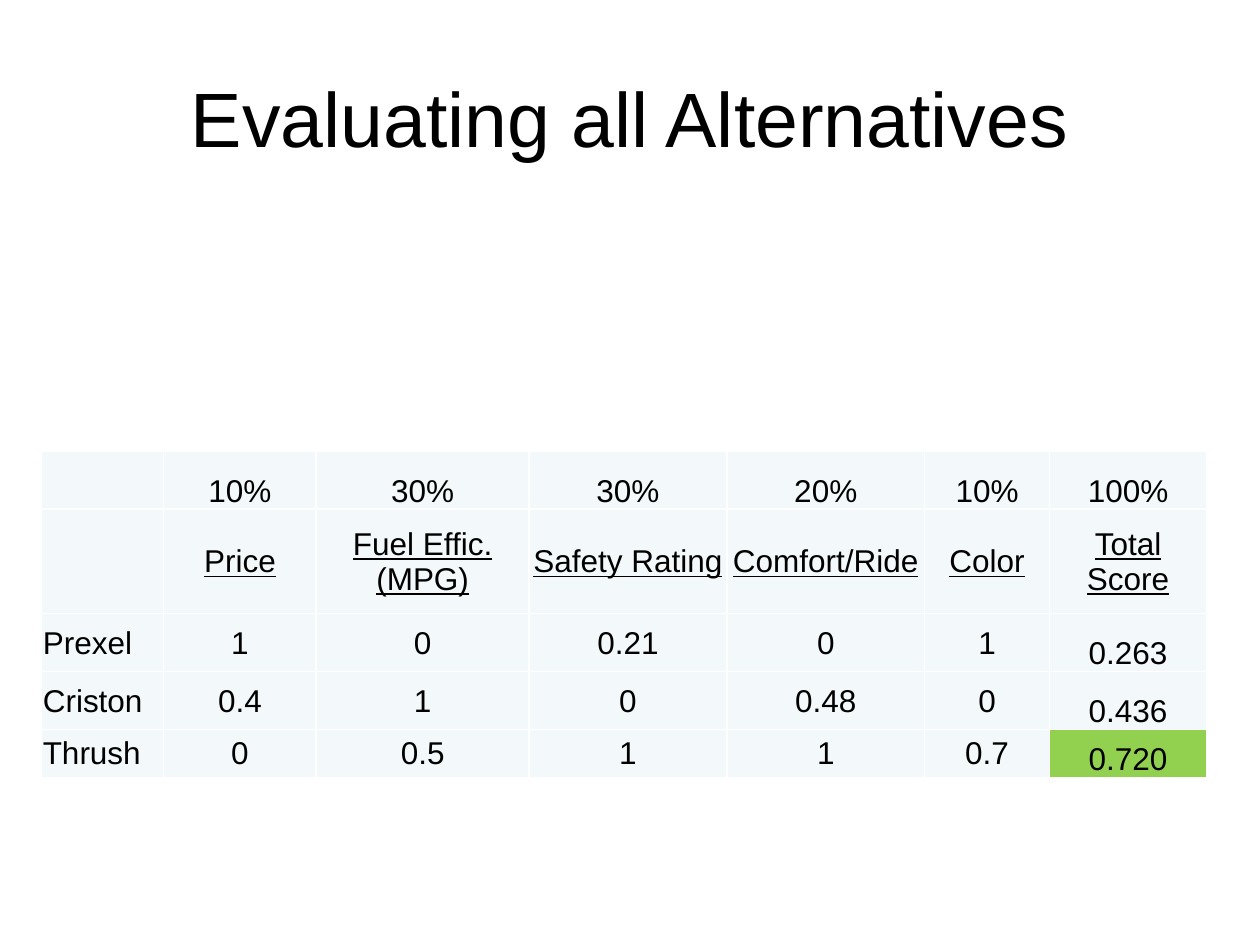
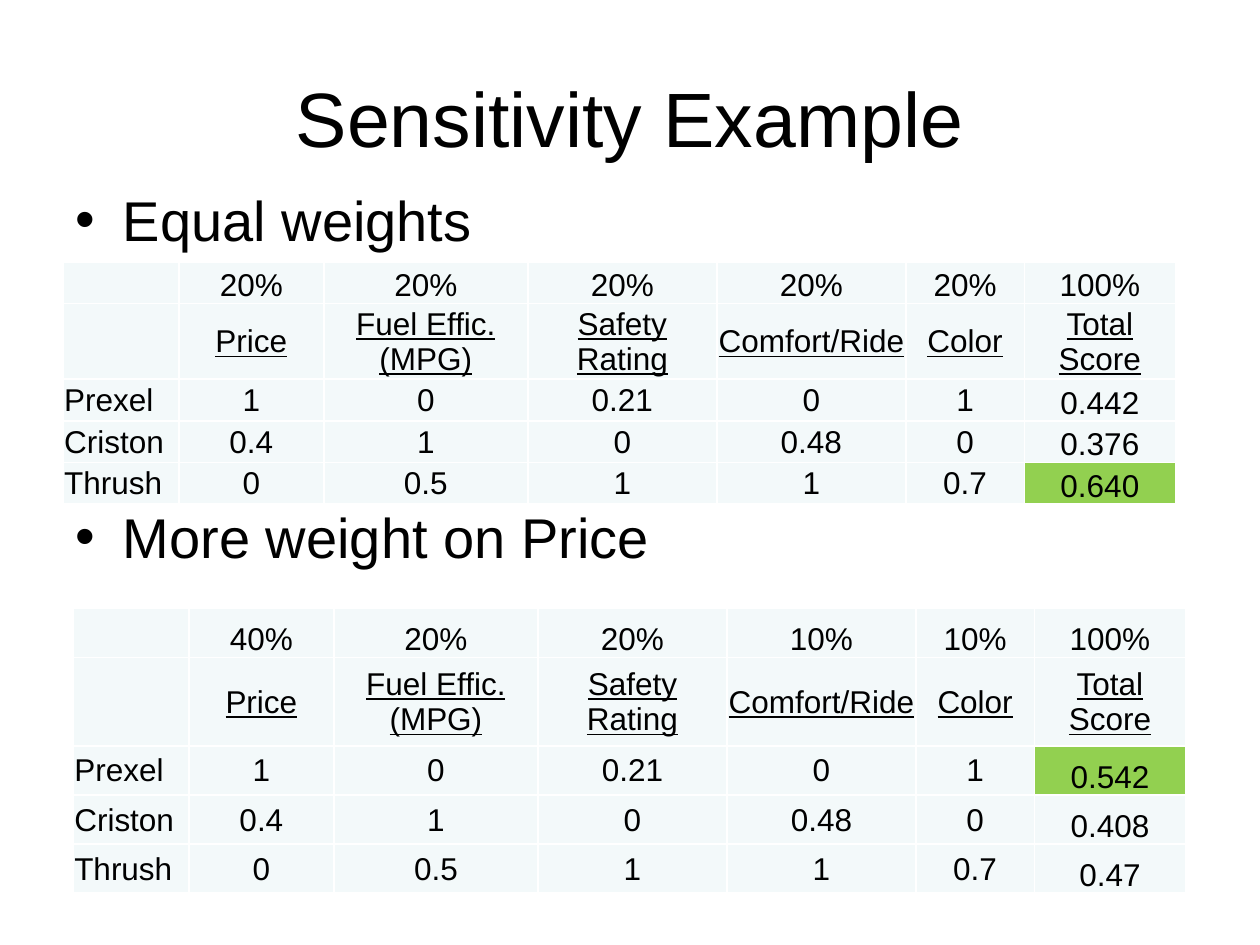
import pptx
import pptx.util
import pptx.dml.color
import pptx.enum.text
import pptx.oxml
import pptx.oxml.ns

Inches, Pt = pptx.util.Inches, pptx.util.Pt
ALIGN = pptx.enum.text.PP_ALIGN
ANCHOR = pptx.enum.text.MSO_ANCHOR

COLORS = {"text": "000000", "cell": "F3F9FA", "best": "92D050", "border": "FFFFFF"}
FONT = "Arial"

# Content shared by all score tables
CRITERIA = ["Price", "Fuel Effic. (MPG)", "Safety Rating", "Comfort/Ride", "Color", "Total Score"]
RATINGS = {
    "Prexel": ["1", "0", "0.21", "0", "1"],
    "Criston": ["0.4", "1", "0", "0.48", "0"],
    "Thrush": ["0", "0.5", "1", "1", "0.7"],
}
WIDE_COLS = [0.97, 1.21, 1.69, 1.57, 1.57, 0.99, 1.25]
NARROW_COLS = [0.92, 1.15, 1.62, 1.5, 1.5, 0.94, 1.2]


def rgb(name):
    return pptx.dml.color.RGBColor.from_string(COLORS[name])


def place(shape, left, top, width, height):
    shape.left, shape.top = Inches(left), Inches(top)
    shape.width, shape.height = Inches(width), Inches(height)


def format_runs(p, size, underline=None):
    for r in p.runs:
        r.font.name = FONT
        r.font.size = Pt(size)
        r.font.color.rgb = rgb("text")
        r.font.underline = underline


def add_slide(prs, layout, title):
    s = prs.slides.add_slide(prs.slide_layouts[layout])
    place(s.shapes.title, 0.5, 0.3, 9, 1.25)
    tf = s.shapes.title.text_frame
    tf.text = title
    tf.vertical_anchor = ANCHOR.MIDDLE
    tf.paragraphs[0].alignment = ALIGN.CENTER
    format_runs(tf.paragraphs[0], 44)
    return s


def fill_body(s, bullets, gap):
    """Write the bullets with a gap, in points, that leaves room for a table."""
    body = s.placeholders[1]
    place(body, 0.5, 1.42, 9, 5.92)
    tf = body.text_frame
    tf.text = "\n".join(bullets)
    tf.auto_size = pptx.enum.text.MSO_AUTO_SIZE.NONE
    for i, p in enumerate(tf.paragraphs):
        if i:
            p.space_before = Pt(gap)
        format_runs(p, 32)


def set_borders(cell):
    tc_pr = cell._tc.get_or_add_tcPr()
    for i, side in enumerate(["lnL", "lnR", "lnT", "lnB"]):
        tc_pr.insert(i, pptx.oxml.parse_xml(
            f'<a:{side} {pptx.oxml.ns.nsdecls("a")} w="12700"><a:solidFill>'
            f'<a:srgbClr val="{COLORS["border"]}"/></a:solidFill></a:{side}>'))


def format_cell(cell, fill, anchor, align, underline):
    cell.margin_left = cell.margin_right = cell.margin_top = Inches(0.01)
    cell.margin_bottom = 0
    cell.vertical_anchor = anchor
    cell.fill.solid()
    cell.fill.fore_color.rgb = rgb(fill)
    set_borders(cell)
    p = cell.text_frame.paragraphs[0]
    p.alignment = align
    format_runs(p, 18, underline)


def add_score_table(s, left, top, cols, rows, weights, totals):
    """Weights, criteria and ratings, with the highest total highlighted."""
    data = [[""] + weights + ["100%"], [""] + CRITERIA]
    data += [[car] + ratings + [total]
             for (car, ratings), total in zip(RATINGS.items(), totals)]
    best_row = 2 + totals.index(max(totals, key=float))
    last_col = len(cols) - 1

    table = s.shapes.add_table(len(rows), len(cols), Inches(left), Inches(top),
                               Inches(sum(cols)), Inches(sum(rows))).table
    table.first_row = table.horz_banding = False
    for column, width in zip(table.columns, cols):
        column.width = Inches(width)
    for row, height in zip(table.rows, rows):
        row.height = Inches(height)

    for i, values in enumerate(data):
        for j, value in enumerate(values):
            cell = table.cell(i, j)
            cell.text_frame.text = value
            is_total = i > 1 and j == last_col
            format_cell(
                cell,
                fill="best" if is_total and i == best_row else "cell",
                anchor=ANCHOR.BOTTOM if i == 0 or is_total else ANCHOR.MIDDLE,
                align=ALIGN.LEFT if j == 0 else ALIGN.CENTER,
                underline=True if i == 1 else None)


def main():
    prs = pptx.Presentation()
    prs.slide_width, prs.slide_height = Inches(10), Inches(7.5)

    # Weighted scores
    s = add_slide(prs, 5, "Evaluating all Alternatives")
    add_score_table(s, 0.33, 3.58, WIDE_COLS, [0.46, 0.83, 0.46, 0.46, 0.38],
                    ["10%", "30%", "30%", "20%", "10%"], ["0.263", "0.436", "0.720"])

    # Scores under other weights
    s = add_slide(prs, 1, "Sensitivity Example")
    fill_body(s, ["Equal weights", "More weight on Price"], gap=143)
    add_score_table(s, 0.5, 2.08, NARROW_COLS, [0.33, 0.6] + [0.33] * 3,
                    ["20%"] * 5, ["0.442", "0.376", "0.640"])
    add_score_table(s, 0.58, 4.83, NARROW_COLS, [0.39, 0.7] + [0.39] * 3,
                    ["40%", "20%", "20%", "10%", "10%"], ["0.542", "0.408", "0.47"])

    prs.save("out.pptx")


if __name__ == "__main__":
    main()
